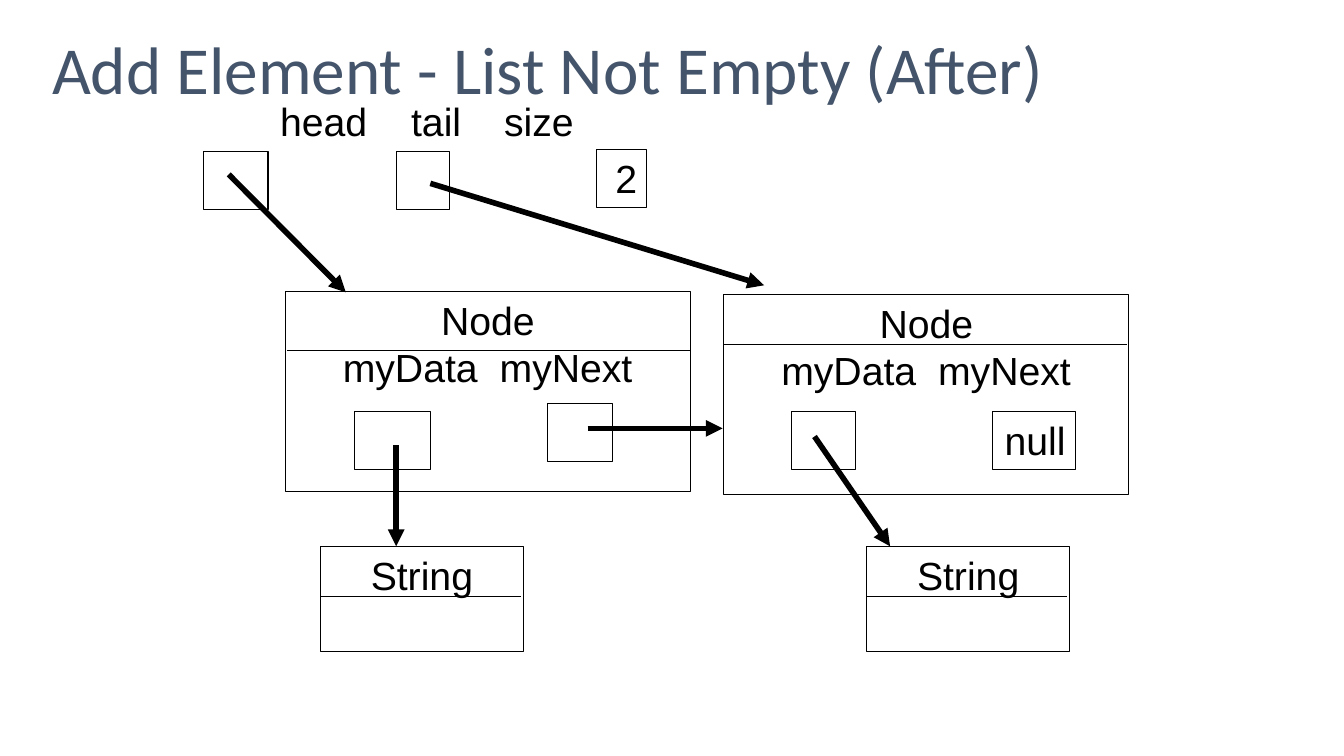
from dataclasses import dataclass

from lxml import etree
from pptx import Presentation
from pptx import util as u
from pptx.dml import color
from pptx.enum import shapes, text
from pptx.oxml import ns


@dataclass(frozen=True)
class Theme:
    ink: str = "000000"
    title_ink: str = "44546A"
    body_font: str = "Arial"
    title_font: str = "Calibri"
    body_size: float = 28
    title_size: float = 48
    thin: float = 0.75
    thick: float = 4


@dataclass(frozen=True)
class Box:
    left: float
    top: float
    width: float
    height: float
    lines: tuple[str, ...] = ()
    align: str = "CENTER"
    tabs: tuple[float, ...] = ()
    divider: float = 0
    divider_shift: float = 0
    wrap: bool = True


@dataclass(frozen=True)
class Arrow:
    x1: float
    y1: float
    x2: float
    y2: float


THEME = Theme()
CELL = 41.8
FIELD_TABS = (34, 146)
FIELDS = ("Node", "\tmyData\tmyNext")
NODE_SIZE = (289.4, 143.3)
STRING_SIZE = (144.7, 74.9)
STRING_TOP = 390.2

BOXES = (
    Box(145.4, 108, 46.1, CELL),
    Box(283, 108, 38.2, CELL),
    Box(426.2, 106.6, 36, CELL, ("2",), "RIGHT"),
    Box(229, STRING_TOP, *STRING_SIZE, ("String",), divider=36),
    Box(203.8, 208.1, *NODE_SIZE, FIELDS, tabs=FIELD_TABS,
        divider=42.5, divider_shift=1.4),
    Box(391, 288, 46.8, CELL),
    Box(253.4, 293.8, 54, CELL),
    Box(619.2, STRING_TOP, *STRING_SIZE, ("String",), divider=36),
    Box(517, 210.2, *NODE_SIZE, FIELDS, tabs=FIELD_TABS, divider=36),
    Box(709.2, 293.8, 59, CELL, ("null",), "RIGHT", wrap=False),
    Box(565.2, 293.8, 46.1, CELL),
)

ARROWS = (
    Arrow(163.4, 124.6, 247, 208.8),
    Arrow(307.4, 131, 545.8, 203.8),
    Arrow(283, 318.2, 283, STRING_TOP),
    Arrow(419.8, 306, 516.2, 306),
    Arrow(581.8, 311.8, 635.8, STRING_TOP),
)


def write(para, words: str, *, font: str = THEME.body_font,
          size: float = THEME.body_size, ink: str = THEME.ink,
          align: str = "LEFT", tabs: tuple[float, ...] = ()) -> None:
    para.alignment = text.PP_ALIGN[align]
    if tabs:
        stops = etree.SubElement(para._p.get_or_add_pPr(), ns.qn("a:tabLst"))
        for stop in tabs:
            etree.SubElement(stops, ns.qn("a:tab"), pos=str(int(u.Pt(stop))), algn="l")
    span = para.add_run()
    span.text = words
    span.font.name = font
    span.font.size = u.Pt(size)
    span.font.color.rgb = color.RGBColor.from_string(ink)


def draw_line(page, line: Arrow, width: float, pointed: bool = False) -> None:
    ends = (u.Pt(value) for value in (line.x1, line.y1, line.x2, line.y2))
    connector = page.shapes.add_connector(shapes.MSO_CONNECTOR.STRAIGHT, *ends)
    connector.line.color.rgb = color.RGBColor.from_string(THEME.ink)
    connector.line.width = u.Pt(width)
    if pointed:
        etree.SubElement(connector.line._get_or_add_ln(), ns.qn("a:tailEnd"), type="triangle")
    etree.SubElement(connector._element.spPr, ns.qn("a:effectLst"))


def draw_box(page, box: Box) -> None:
    shape = page.shapes.add_shape(
        shapes.MSO_SHAPE.RECTANGLE, u.Pt(box.left), u.Pt(box.top),
        u.Pt(box.width), u.Pt(box.height))
    shape.shadow.inherit = False
    shape.fill.background()
    shape.line.color.rgb = color.RGBColor.from_string(THEME.ink)
    shape.line.width = u.Pt(THEME.thin)
    frame = shape.text_frame
    frame.vertical_anchor = text.MSO_ANCHOR.TOP
    frame.word_wrap = box.wrap
    for index, words in enumerate(box.lines):
        para = frame.add_paragraph() if index else frame.paragraphs[0]
        if "\t" in words:
            write(para, words, tabs=box.tabs)
        else:
            write(para, words, align=box.align)
    if box.divider:
        start, y = box.left + box.divider_shift, box.top + box.divider
        draw_line(page, Arrow(start, y, start + box.width - 1.4, y), THEME.thin)


def draw_title(page, words: str) -> None:
    title = page.shapes.title
    title.left, title.top, title.width, title.height = (
        u.Pt(value) for value in (30, 0, 900, 104.4))
    frame = title.text_frame
    frame.word_wrap = True
    frame.auto_size = text.MSO_AUTO_SIZE.NONE
    frame.vertical_anchor = text.MSO_ANCHOR.MIDDLE
    frame.paragraphs[0].line_spacing = 0.9
    write(frame.paragraphs[0], words, font=THEME.title_font,
          size=THEME.title_size, ink=THEME.title_ink)


def draw_labels(page) -> None:
    labels = page.shapes.add_textbox(u.Pt(193), u.Pt(66.2), u.Pt(283), u.Pt(41))
    labels.text_frame.word_wrap = True
    write(labels.text_frame.paragraphs[0], "head\ttail\tsize", tabs=(93.6, 160))


def main() -> None:
    deck = Presentation()
    deck.slide_width, deck.slide_height = u.Pt(960), u.Pt(540)
    page = deck.slides.add_slide(deck.slide_layouts[5])
    draw_title(page, "Add Element - List Not Empty (After)")
    draw_labels(page)
    for box in BOXES:
        draw_box(page, box)
    for arrow in ARROWS:
        draw_line(page, arrow, THEME.thick, pointed=True)
    deck.save("out.pptx")


if __name__ == "__main__":
    main()
